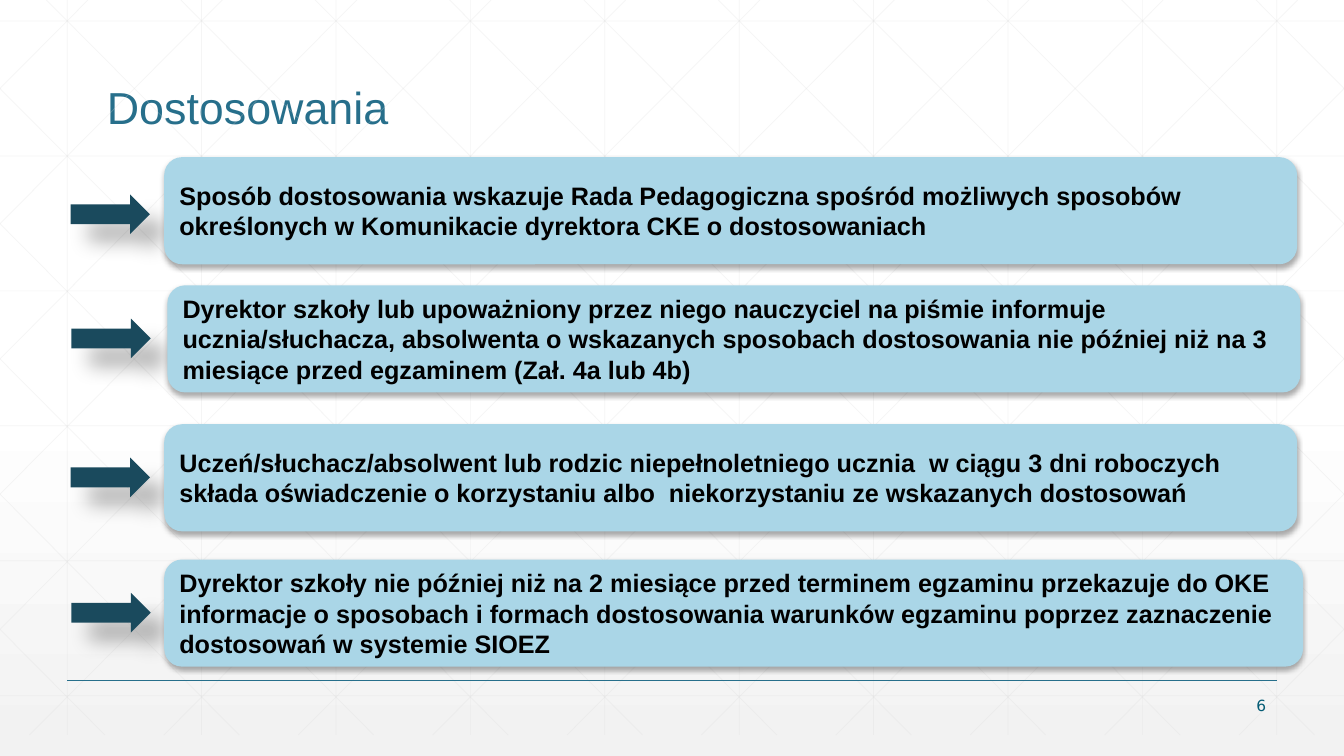
from lxml.etree import SubElement
from pptx import Presentation
from pptx.dml.color import RGBColor
from pptx.enum.shapes import MSO_CONNECTOR, MSO_SHAPE
from pptx.enum.text import MSO_ANCHOR, PP_ALIGN
from pptx.oxml.ns import qn
from pptx.util import Cm, Pt

COLORS = {
    "white": "FFFFFF",
    "fade": "F2F2F2",
    "grid": "D9D9D9",
    "teal": "276F8B",
    "arrow": "1A4A5D",
    "card": "AAD6E7",
    "text": "000000",
    "number": "045C75",
}
WIDTH, HEIGHT = 33.87, 19.05
GRID_BOTTOM = 18.52
STEP = WIDTH / 10
SLOPE = 0.994

deck = Presentation()
deck.slide_width, deck.slide_height = Cm(WIDTH), Cm(HEIGHT)
page = deck.slides.add_slide(deck.slide_layouts[5])

background = page.background.fill
background.gradient()
background.gradient_angle = 270
for stop, (position, name) in zip(background.gradient_stops, [(0.53, "white"), (1, "fade")]):
    stop.position = position
    stop.color.rgb = RGBColor.from_string(COLORS[name])


def add_line(start, end, color, width, opacity=100):
    line = page.shapes.add_connector(MSO_CONNECTOR.STRAIGHT, *map(Cm, start + end))
    line.line.color.rgb = RGBColor.from_string(COLORS[color])
    line.line.width = Pt(width)
    properties = line._element.spPr
    tint = properties.find(".//" + qn("a:srgbClr"))
    SubElement(tint, qn("a:alpha"), val=str(opacity * 1000))
    SubElement(properties, qn("a:effectLst"))


def add_block(kind, place, color, opacity, blur, distance, angle):
    block = page.shapes.add_shape(kind, *map(Cm, place))
    block.fill.solid()
    block.fill.fore_color.rgb = RGBColor.from_string(COLORS[color])
    block.line.fill.background()
    block.shadow.inherit = False
    effects = block._element.spPr.find(qn("a:effectLst"))
    shadow = SubElement(
        effects, qn("a:outerShdw"), blurRad=str(Pt(blur)), dist=str(Pt(distance)),
        dir=str(angle * 60000), algn="tl", rotWithShape="0",
    )
    tint = SubElement(shadow, qn("a:srgbClr"), val=COLORS["text"])
    SubElement(tint, qn("a:alpha"), val=str(opacity * 1000))
    return block


for column in range(10):
    x = STEP * (column + 0.5)
    add_line((x, 0), (x, GRID_BOTTOM), "grid", 0.5, 25)
for row in range(6):
    y = 0.53 + 3.4 * row
    add_line((0, y), (WIDTH, y), "grid", 0.5, 25)
for diagonal in range(-5, 10):
    origin = 1.17 + STEP * diagonal
    top = max(0, -origin / SLOPE)
    bottom = min(GRID_BOTTOM, (WIDTH - origin) / SLOPE)
    left, right = origin + top * SLOPE, origin + bottom * SLOPE
    add_line((left, top), (right, bottom), "grid", 0.5, 25)
    add_line((WIDTH - left, top), (WIDTH - right, bottom), "grid", 0.5, 25)
add_line((STEP / 2, 17.15), (WIDTH - STEP / 2, 17.15), "teal", 1)

title = page.shapes.title
title.left, title.top, title.width, title.height = Cm(2.44), Cm(1.42), Cm(27.94), Cm(2.08)
title.text_frame.text = "Dostosowania"

number = page.shapes.add_textbox(Cm(29.62), Cm(17.48), Cm(2.54), Cm(0.61))
number.text_frame.text = "6"

steps = [
    (1.78, 4.9, 4.14, 3.96, 28.55,
     "Sposób dostosowania wskazuje Rada Pedagogiczna spośród możliwych sposobów "
     "określonych w Komunikacie dyrektora CKE o dostosowaniach"),
    (1.8, 8.03, 4.22, 7.19, 28.55,
     "Dyrektor szkoły lub upoważniony przez niego nauczyciel na piśmie informuje "
     "ucznia/słuchacza, absolwenta o wskazanych sposobach dostosowania nie później niż na 3 "
     "miesiące przed egzaminem (Zał. 4a lub 4b)"),
    (1.78, 11.53, 4.14, 10.69, 28.55,
     "Uczeń/słuchacz/absolwent lub rodzic niepełnoletniego ucznia  w ciągu 3 dni roboczych "
     "składa oświadczenie o korzystaniu albo  niekorzystaniu ze wskazanych dostosowań"),
    (1.8, 14.94, 4.14, 14.1, 28.7,
     "Dyrektor szkoły nie później niż na 2 miesiące przed terminem egzaminu przekazuje do OKE\n"
     "informacje o sposobach i formach dostosowania warunków egzaminu poprzez zaznaczenie "
     "dostosowań w systemie SIOEZ"),
]
cards = []
for arrow_left, arrow_top, left, top, width, text in steps:
    add_block(MSO_SHAPE.RIGHT_ARROW, (arrow_left, arrow_top, 2, 1), "arrow", 30, 15, 18, 45)
    card = add_block(MSO_SHAPE.ROUNDED_RECTANGLE, (left, top, width, 2.7), "card", 32, 3.5, 2.2, 90)
    card.text_frame.text = text
    cards.append(card)

title_format = {"name": "Arial", "size": Pt(32), "bold": False}
number_format = {"name": "DejaVu Sans", "size": Pt(11), "bold": False}
card_format = {"name": "Arial", "size": Pt(18), "bold": True}
styles = [
    (title, "teal", MSO_ANCHOR.BOTTOM, PP_ALIGN.LEFT, 0.9, title_format),
    (number, "number", MSO_ANCHOR.MIDDLE, PP_ALIGN.RIGHT, 1, number_format),
]
styles += [(card, "text", MSO_ANCHOR.MIDDLE, PP_ALIGN.LEFT, 1, card_format) for card in cards]
for box, color, anchor, alignment, spacing, font_format in styles:
    box.text_frame.word_wrap = True
    box.text_frame.vertical_anchor = anchor
    for para in box.text_frame.paragraphs:
        para.alignment = alignment
        para.line_spacing = spacing
        for span in para.runs:
            span.font.color.rgb = RGBColor.from_string(COLORS[color])
            for attribute, value in font_format.items():
                setattr(span.font, attribute, value)

deck.save("out.pptx")
